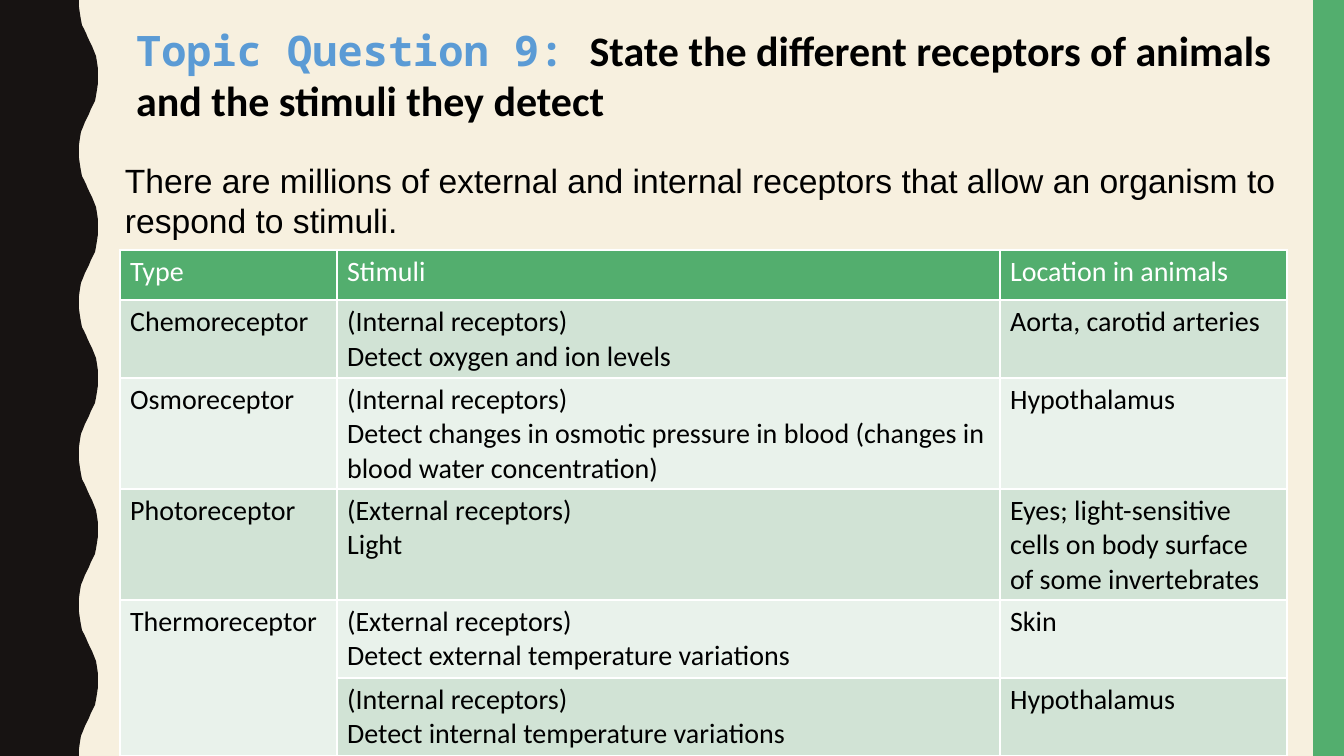
import lxml.etree
import pptx
import pptx.dml.color
import pptx.enum.shapes
import pptx.enum.text
import pptx.oxml.ns
import pptx.util

PX = 914400 / 100.8
WIDTH, HEIGHT = 1344, 756
COLORS = {
    "background": "F7F0DF",
    "wave": "171312",
    "green": "53AE6E",
    "band_dark": "D1E3D5",
    "band_light": "E9F2EB",
    "topic": "5B9BD5",
    "black": "000000",
    "white": "FFFFFF",
}
# Edge of half a wave, from trough to crest: (x, y) in px
HALF_WAVE = [(79, 0), (79, 7), (80, 14), (81, 20), (82, 25), (84, 29), (86, 33), (88, 38),
             (90, 42), (92, 46), (94, 51), (96, 56), (97, 62), (98, 69)]
HALF_WAVE_COUNT = 10

COLUMN_WIDTHS = [217, 663, 287]
ROW_HEIGHTS = [50, 78, 111, 111, 78, 78]
RECEPTORS = [
    ["Type", "Stimuli", "Location in animals"],
    ["Chemoreceptor", "(Internal receptors)\nDetect oxygen and ion levels", "Aorta, carotid arteries"],
    ["Osmoreceptor",
     "(Internal receptors)\nDetect changes in osmotic pressure in blood (changes in blood water concentration)",
     "Hypothalamus"],
    ["Photoreceptor", "(External receptors)\nLight",
     "Eyes; light-sensitive cells on body surface of some invertebrates"],
    ["Thermoreceptor", "(External receptors)\nDetect external temperature variations", "Skin"],
    ["", "(Internal receptors)\nDetect internal temperature variations", "Hypothalamus"],
]


def px(length):
    return pptx.util.Emu(round(length * PX))


def color(name):
    return pptx.dml.color.RGBColor.from_string(COLORS[name])


def paint(shape, name):
    shape.shadow.inherit = False
    shape.fill.solid()
    shape.fill.fore_color.rgb = color(name)
    shape.line.fill.background()


def set_font(font, name, size, color_name, bold=False):
    font.name = name
    font.size = pptx.util.Pt(size)
    font.bold = bold
    font.color.rgb = color(color_name)


def add_side_bands(slide, left, top, width, height):
    # Wavy band on the left
    half_height = height / HALF_WAVE_COUNT
    trough, crest = HALF_WAVE[0][0], HALF_WAVE[-1][0]
    edge = []
    for half in range(HALF_WAVE_COUNT):
        for x, y in HALF_WAVE:
            edge_x = x if half % 2 == 0 else trough + crest - x
            edge.append((left + edge_x, round(top + half * half_height + y)))
    edge += [(left + trough, top + height), (left, top + height)]
    builder = slide.shapes.build_freeform(left, top, scale=PX)
    builder.add_line_segments(edge, close=True)
    paint(builder.convert_to_shape(), "wave")

    # Green strip on the right
    strip_width = 31
    strip = slide.shapes.add_shape(pptx.enum.shapes.MSO_SHAPE.RECTANGLE, px(left + width - strip_width),
                                   px(top), px(strip_width), px(height))
    paint(strip, "green")


def add_title(slide, left, top, width, height):
    title = slide.shapes.title
    title.left, title.top, title.width, title.height = map(px, (left, top, width, height))
    frame = title.text_frame
    frame.auto_size = pptx.enum.text.MSO_AUTO_SIZE.NONE
    frame.vertical_anchor = pptx.enum.text.MSO_ANCHOR.MIDDLE
    paragraph = frame.paragraphs[0]
    paragraph.alignment = pptx.enum.text.PP_ALIGN.LEFT
    for text, font_name, color_name in [
        ("Topic Question 9: ", "Noto Sans Mono", "topic"),
        ("State the different receptors of animals and the stimuli they detect", "Calibri", "black"),
    ]:
        run = paragraph.add_run()
        run.text = text
        set_font(run.font, font_name, 30, color_name, bold=True)


def add_introduction(slide, left, top, width, height):
    box = slide.shapes.add_textbox(px(left), px(top), px(width), px(height))
    box.text_frame.word_wrap = True
    paragraph = box.text_frame.paragraphs[0]
    paragraph.text = ("There are millions of external and internal receptors "
                      "that allow an organism to respond to stimuli.")
    set_font(paragraph.font, "Arial", 24, "black")


def add_borders(cell):
    properties = cell._tc.get_or_add_tcPr()
    qn = pptx.oxml.ns.qn
    for side in ("lnL", "lnR", "lnT", "lnB"):
        line = lxml.etree.SubElement(properties, qn("a:" + side), w=str(pptx.util.Pt(1)))
        fill = lxml.etree.SubElement(line, qn("a:solidFill"))
        lxml.etree.SubElement(fill, qn("a:srgbClr"), val=COLORS["white"])


def add_receptor_table(slide, left, top):
    table = slide.shapes.add_table(len(ROW_HEIGHTS), len(COLUMN_WIDTHS), px(left), px(top),
                                   px(sum(COLUMN_WIDTHS)), px(sum(ROW_HEIGHTS))).table
    for column, width in zip(table.columns, COLUMN_WIDTHS):
        column.width = px(width)
    for row, height in zip(table.rows, ROW_HEIGHTS):
        row.height = px(height)

    for row_index, texts in enumerate(RECEPTORS):
        if row_index == 0:
            fill_name, text_color = "green", "white"
        else:
            fill_name, text_color = ("band_dark" if row_index % 2 else "band_light"), "black"
        for column_index, text in enumerate(texts):
            cell = table.cell(row_index, column_index)
            add_borders(cell)
            cell.fill.solid()
            cell.fill.fore_color.rgb = color(fill_name)
            cell.text = text
            for paragraph in cell.text_frame.paragraphs:
                set_font(paragraph.font, "Calibri", 20, text_color)

    # Thermoreceptor covers the last two rows
    table.cell(4, 0).merge(table.cell(5, 0))


def main():
    presentation = pptx.Presentation()
    presentation.slide_width, presentation.slide_height = px(WIDTH), px(HEIGHT)
    slide = presentation.slides.add_slide(presentation.slide_layouts.get_by_name("Title Only"))
    slide.background.fill.solid()
    slide.background.fill.fore_color.rgb = color("background")
    add_side_bands(slide, 0, 0, WIDTH, HEIGHT)
    add_introduction(slide, 115, 155, 1186, 92)
    add_receptor_table(slide, 120, 250)
    add_title(slide, 126, 21, 1172, 108)
    presentation.save("out.pptx")


if __name__ == "__main__":
    main()
